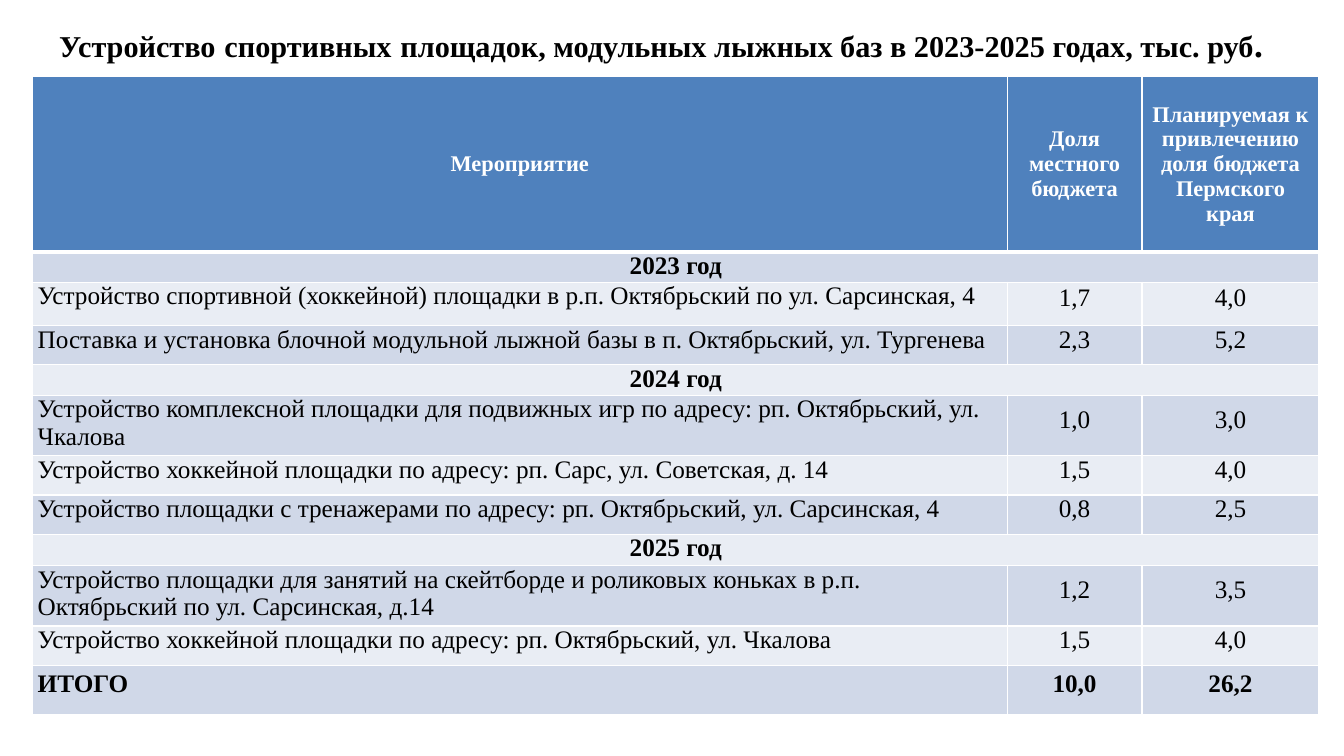
"""Build a slide with a budget table for sports grounds and ski lodges."""
import pptx
import pptx.dml.color
import pptx.enum.text
import pptx.oxml.ns
import pptx.util
from lxml import etree

Cm = pptx.util.Cm
Pt = pptx.util.Pt
RGBColor = pptx.dml.color.RGBColor
ALIGN = pptx.enum.text.PP_ALIGN
ANCHOR = pptx.enum.text.MSO_ANCHOR

FONT = "Times New Roman"
BLACK = RGBColor(0x00, 0x00, 0x00)
WHITE = RGBColor(0xFF, 0xFF, 0xFF)
HEADER_BLUE = RGBColor(0x4F, 0x81, 0xBD)
BANDS = (RGBColor(0xE9, 0xED, 0xF4), RGBColor(0xD0, 0xD8, 0xE8))

TITLE_RUNS = [
    ("Устройство", 21.6),
    (" ", 25.2),
    ("спортивных", 21.6),
    (" ", 25.2),
    ("площадок, модульных лыжных баз в 2023-2025 годах, тыс. руб", 21.6),
    (".", 25.2),
]
COLUMN_WIDTHS = (24.56, 3.4, 4.46)
HEADER = ("Мероприятие", "Доля местного бюджета", "Планируемая к привлечению доля бюджета Пермского края")
HEADER_HEIGHT = 4.42
BODY = [
    (0.74, "2023 год"),
    (1.09, "Устройство спортивной (хоккейной) площадки в р.п. Октябрьский по ул. Сарсинская, 4", "1,7", "4,0"),
    (0.99, "Поставка и установка блочной модульной лыжной базы в п. Октябрьский, ул. Тургенева", "2,3", "5,2"),
    (0.74, "2024 год"),
    (1.47, "Устройство комплексной площадки для подвижных игр по адресу: рп. Октябрьский, ул. Чкалова", "1,0", "3,0"),
    (0.99, "Устройство хоккейной площадки по адресу: рп. Сарс, ул. Советская, д. 14", "1,5", "4,0"),
    (0.99, "Устройство площадки с тренажерами по адресу: рп. Октябрьский, ул. Сарсинская, 4", "0,8", "2,5"),
    (0.79, "2025 год"),
    (1.47, "Устройство площадки для занятий на скейтборде и роликовых коньках в р.п. Октябрьский по ул. Сарсинская, д.14", "1,2", "3,5"),
    (0.99, "Устройство хоккейной площадки по адресу: рп. Октябрьский, ул. Чкалова", "1,5", "4,0"),
]
TOTAL = (1.24, "ИТОГО", "10,0", "26,2")


def add_borders(cell, top, bottom):
    properties = cell._tc.get_or_add_tcPr()
    for side, width in (("L", 1), ("R", 1), ("T", top), ("B", bottom)):
        line = etree.SubElement(properties, pptx.oxml.ns.qn(f"a:ln{side}"), w=str(Pt(width)))
        fill = etree.SubElement(line, pptx.oxml.ns.qn("a:solidFill"))
        etree.SubElement(fill, pptx.oxml.ns.qn("a:srgbClr"), val=str(WHITE))


def write_cell(cell, text, fill, size=18, color=BLACK, bold=False,
               align=ALIGN.CENTER, anchor=ANCHOR.MIDDLE, spacing=None, tight=True):
    cell.fill.solid()
    cell.fill.fore_color.rgb = fill
    cell.vertical_anchor = anchor
    if tight:
        cell.margin_left = cell.margin_right = Cm(0.13)
        cell.margin_top = cell.margin_bottom = 0
    paragraph = cell.text_frame.paragraphs[0]
    paragraph.text = text
    paragraph.alignment = align
    if spacing:
        paragraph.line_spacing = Pt(spacing)
    paragraph.font.name = FONT
    paragraph.font.size = Pt(size)
    paragraph.font.bold = bold
    paragraph.font.color.rgb = color


def add_title(slide):
    box = slide.shapes.add_textbox(Cm(0.56), Cm(0.46), Cm(32.2), Cm(1.27))
    frame = box.text_frame
    frame.word_wrap = True
    frame.vertical_anchor = ANCHOR.MIDDLE
    paragraph = frame.paragraphs[0]
    paragraph.alignment = ALIGN.CENTER
    paragraph.font.name = FONT
    paragraph.font.bold = True
    paragraph.font.color.rgb = BLACK
    for text, size in TITLE_RUNS:
        run = paragraph.add_run()
        run.text = text
        run.font.size = Pt(size)


def add_budget_table(slide):
    rows = [(HEADER_HEIGHT, *HEADER), *BODY, TOTAL]
    heights = [row[0] for row in rows]
    frame = slide.shapes.add_table(len(rows), len(COLUMN_WIDTHS), Cm(0.82), Cm(1.93),
                                   Cm(sum(COLUMN_WIDTHS)), Cm(sum(heights)))
    table = frame.table
    for column, width in zip(table.columns, COLUMN_WIDTHS):
        column.width = Cm(width)
    for index, (height, *texts) in enumerate(rows):
        table.rows[index].height = Cm(height)
        cells = list(table.rows[index].cells)
        for cell in cells:
            add_borders(cell, 3 if index == 1 else 1, 3 if index == 0 else 1)
        band = BANDS[index % 2]
        if index == 0:
            for cell, text in zip(cells, texts):
                write_cell(cell, text, HEADER_BLUE, size=16, color=WHITE, bold=True, tight=False)
        elif len(texts) == 1:
            cells[0].merge(cells[-1])
            write_cell(cells[0], texts[0], band, bold=True, anchor=ANCHOR.TOP)
        elif index == len(rows) - 1:
            write_cell(cells[0], texts[0], band, bold=True, align=ALIGN.LEFT, spacing=11)
            for cell, text in zip(cells[1:], texts[1:]):
                write_cell(cell, text, band, bold=True, anchor=ANCHOR.TOP, tight=False)
        else:
            write_cell(cells[0], texts[0], band, align=ALIGN.LEFT, anchor=ANCHOR.TOP)
            for cell, text in zip(cells[1:], texts[1:]):
                write_cell(cell, text, band, spacing=12)


def main():
    presentation = pptx.Presentation()
    presentation.slide_width = Cm(33.87)
    presentation.slide_height = Cm(19.05)
    slide = presentation.slides.add_slide(presentation.slide_layouts[6])
    add_title(slide)
    add_budget_table(slide)
    presentation.save("out.pptx")


if __name__ == "__main__":
    main()
